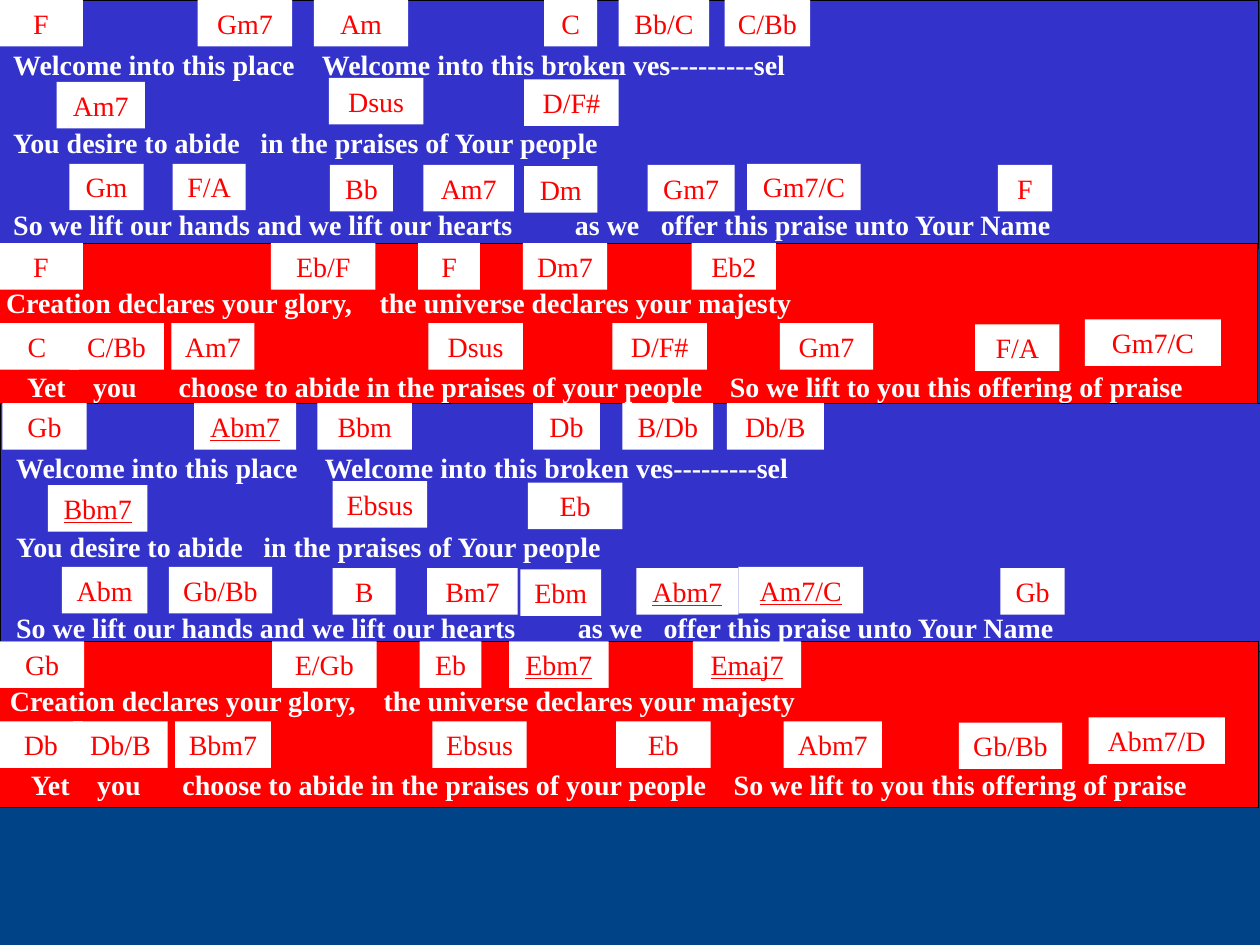
from dataclasses import dataclass
from typing import NamedTuple

from lxml import etree
from pptx import Presentation
from pptx.dml.color import RGBColor
from pptx.enum import shapes, text
from pptx.oxml import ns
from pptx.util import Pt


@dataclass(frozen=True)
class Theme:
    font: str = "Times New Roman"
    size: float = 16
    verse: str = "3333CC"
    chorus: str = "FF0000"
    chord: str = "FF0000"
    paper: str = "FFFFFF"
    outline: str = "000000"
    backdrop: tuple = ("0066CC", "004487")
    outline_width: float = 0.75
    space_before: int = 50000
    row_height: float = 26.6


class Lyric(NamedTuple):
    words: str
    top: float
    tabs: tuple


class Chord(NamedTuple):
    name: str
    left: float
    width: float
    drop: float = 0
    underlined: bool = False


@dataclass(frozen=True)
class Verse:
    color: str
    width: float
    height: float
    lyrics: tuple
    row_tops: tuple


@dataclass(frozen=True)
class Stanza:
    verse: Verse
    left: float
    top: float
    lyric_left: float
    chord_rows: tuple


THEME = Theme()

WELCOME = Verse(THEME.verse, 720.7, 141.8, (
    Lyric("Welcome into this place\tWelcome into this broken ves---------sel", 23.8, (176.4,)),
    Lyric("You desire to abide\tin the praises of Your people", 68.4, (141.2,)),
    Lyric("So we lift our hands and we lift our hearts\tas we\toffer this praise unto Your Name",
          115, (321, 370)),
), (0, 46.8, 93.6))

CREATION = Verse(THEME.chorus, 720, 95, (
    Lyric("Creation declares your glory,\tthe universe declares your majesty", 20.4, (213.5,)),
    Lyric("\tYet\tyou\tchoose to abide in the praises of your people\t"
          "So we lift to you this offering of praise", 68.4, (12, 49.8, 98.6, 413.6)),
), (0, 45.7))

SECTIONS = (
    (
        Stanza(WELCOME, -1.4, 0, 0.5, (
            (Chord("F", -0.7, 48.2), Chord("Gm7", 113, 54), Chord("Am", 179.3, 54),
             Chord("C", 311, 30.2), Chord("Bb/C", 353.5, 51.8), Chord("C/Bb", 414, 49)),
            (Chord("Am7", 32.4, 50.4), Chord("Dsus", 187.9, 54, -2.2),
             Chord("D/F#", 299.5, 54, -1.4)),
            (Chord("Gm", 39.6, 42.5), Chord("F/A", 98.6, 41.8), Chord("Bb", 188.6, 36, 0.7),
             Chord("Am7", 241.9, 51.8, 0.7), Chord("Dm", 299.5, 41.8, 1.4),
             Chord("Gm7", 370.1, 49.7, 0.7), Chord("Gm7/C", 427, 64.8),
             Chord("F", 570.2, 31, 0.7)),
        )),
        Stanza(CREATION, -1.4, 139, -3.6, (
            (Chord("F", -0.7, 48.2), Chord("Eb/F", 154.8, 59.8), Chord("F", 239, 35.3),
             Chord("Dm7", 298.8, 48.2), Chord("Eb2", 395.3, 48.2)),
            (Chord("C", -2.9, 48.2), Chord("C/Bb", 39.6, 54), Chord("Am7", 97.9, 47.5),
             Chord("Dsus", 244.8, 54), Chord("D/F#", 349.9, 54), Chord("Gm7", 445.7, 53.3),
             Chord("F/A", 557.3, 48.2, 0.7), Chord("Gm7/C", 619.9, 77.8, -2.2)),
        )),
    ),
    (
        Stanza(WELCOME, 0, 230.4, 2.2, (
            (Chord("Gb", 1.4, 48.2), Chord("Abm7", 110.9, 58.3, underlined=True),
             Chord("Bbm", 181.4, 54), Chord("Db", 304.6, 38.2), Chord("B/Db", 355.7, 51.8),
             Chord("Db/B", 415.4, 55.4)),
            (Chord("Bbm7", 27.4, 56.9, underlined=True), Chord("Ebsus", 190.1, 54, -2.2),
             Chord("Eb", 301.7, 54, -1.4)),
            (Chord("Abm", 35.3, 49), Chord("Gb/Bb", 96.5, 59), Chord("B", 190.1, 36, 0.7),
             Chord("Bm7", 244.1, 51.8, 0.7), Chord("Ebm", 297.4, 46.1, 1.4),
             Chord("Abm7", 363.6, 58.3, 0.7, True), Chord("Am7/C", 421.9, 71.3, 0, True),
             Chord("Gb", 571.7, 36.7, 0.7)),
        )),
        Stanza(CREATION, -0.7, 366.5, -1.4, (
            (Chord("Gb", 0, 48.2), Chord("E/Gb", 155.5, 59.8), Chord("Eb", 239.8, 35.3),
             Chord("Ebm7", 290.9, 56.9, underlined=True),
             Chord("Emaj7", 396, 61.9, underlined=True)),
            (Chord("Db", -0.7, 48.2), Chord("Db/B", 41.8, 54), Chord("Bbm7", 100.1, 54.7),
             Chord("Ebsus", 247, 54), Chord("Eb", 352.1, 54), Chord("Abm7", 447.8, 56.2),
             Chord("Gb/Bb", 547.9, 59, 0.7), Chord("Abm7/D", 622.1, 77.8, -2.2)),
        )),
    ),
)


def paint_backdrop(slide) -> None:
    fill = slide.background.fill
    fill.gradient()
    for stop, color in zip(fill.gradient_stops, THEME.backdrop):
        stop.color.rgb = RGBColor.from_string(color)
    gradient = slide.element.find(".//" + ns.qn("a:gradFill"))
    gradient.remove(gradient.find(ns.qn("a:lin")))
    spread = etree.SubElement(gradient, ns.qn("a:path"), {"path": "rect"})
    etree.SubElement(spread, ns.qn("a:fillToRect"), {"r": "100000", "b": "100000"})


def add_box(slide, left: float, top: float, width: float, height: float, color: str):
    box = slide.shapes.add_shape(shapes.MSO_SHAPE.RECTANGLE,
                                 Pt(left), Pt(top), Pt(width), Pt(height))
    box.shadow.inherit = False
    box.fill.solid()
    box.fill.fore_color.rgb = RGBColor.from_string(color)
    return box


def write(box, words: str, color: str, align, tabs: tuple = (), **style) -> None:
    frame = box.text_frame
    frame_format = {"word_wrap": True, "vertical_anchor": text.MSO_ANCHOR.TOP,
                    "auto_size": text.MSO_AUTO_SIZE.SHAPE_TO_FIT_TEXT}
    for key, value in frame_format.items():
        setattr(frame, key, value)
    line = frame.paragraphs[0]
    line.alignment = align
    properties = line._p.get_or_add_pPr()
    spacing = etree.SubElement(properties, ns.qn("a:spcBef"))
    etree.SubElement(spacing, ns.qn("a:spcPct"), {"val": str(THEME.space_before)})
    if tabs:
        stops = etree.SubElement(properties, ns.qn("a:tabLst"))
        for tab in tabs:
            etree.SubElement(stops, ns.qn("a:tab"), {"pos": str(Pt(tab)), "algn": "l"})
    run = line.add_run()
    run.text = words
    font_format = {"name": THEME.font, "size": Pt(THEME.size), **style}
    for key, value in font_format.items():
        setattr(run.font, key, value)
    run.font.color.rgb = RGBColor.from_string(color)


def draw_panel(slide, stanza: Stanza) -> None:
    verse = stanza.verse
    panel = add_box(slide, stanza.left, stanza.top, verse.width, verse.height, verse.color)
    panel.line.color.rgb = RGBColor.from_string(THEME.outline)
    panel.line.width = Pt(THEME.outline_width)


def draw_lyric(slide, stanza: Stanza, lyric: Lyric) -> None:
    box = slide.shapes.add_textbox(Pt(stanza.lyric_left), Pt(stanza.top + lyric.top),
                                   Pt(720), Pt(THEME.row_height))
    write(box, lyric.words, THEME.paper, text.PP_ALIGN.LEFT, lyric.tabs, bold=True)


def draw_chord(slide, chord: Chord, row_top: float) -> None:
    box = add_box(slide, chord.left, row_top + chord.drop, chord.width,
                  THEME.row_height, THEME.paper)
    box.line.fill.background()
    write(box, chord.name, THEME.chord, text.PP_ALIGN.CENTER, underline=chord.underlined)


def main() -> None:
    deck = Presentation()
    deck.slide_width, deck.slide_height = Pt(720), Pt(540)
    slide = deck.slides.add_slide(deck.slide_layouts[6])
    paint_backdrop(slide)
    for section in SECTIONS:
        for stanza in section:
            draw_panel(slide, stanza)
        for stanza in section:
            for lyric in stanza.verse.lyrics:
                draw_lyric(slide, stanza, lyric)
            for row_top, chords in zip(stanza.verse.row_tops, stanza.chord_rows):
                for chord in chords:
                    draw_chord(slide, chord, stanza.top + row_top)
    deck.save("out.pptx")


if __name__ == "__main__":
    main()
